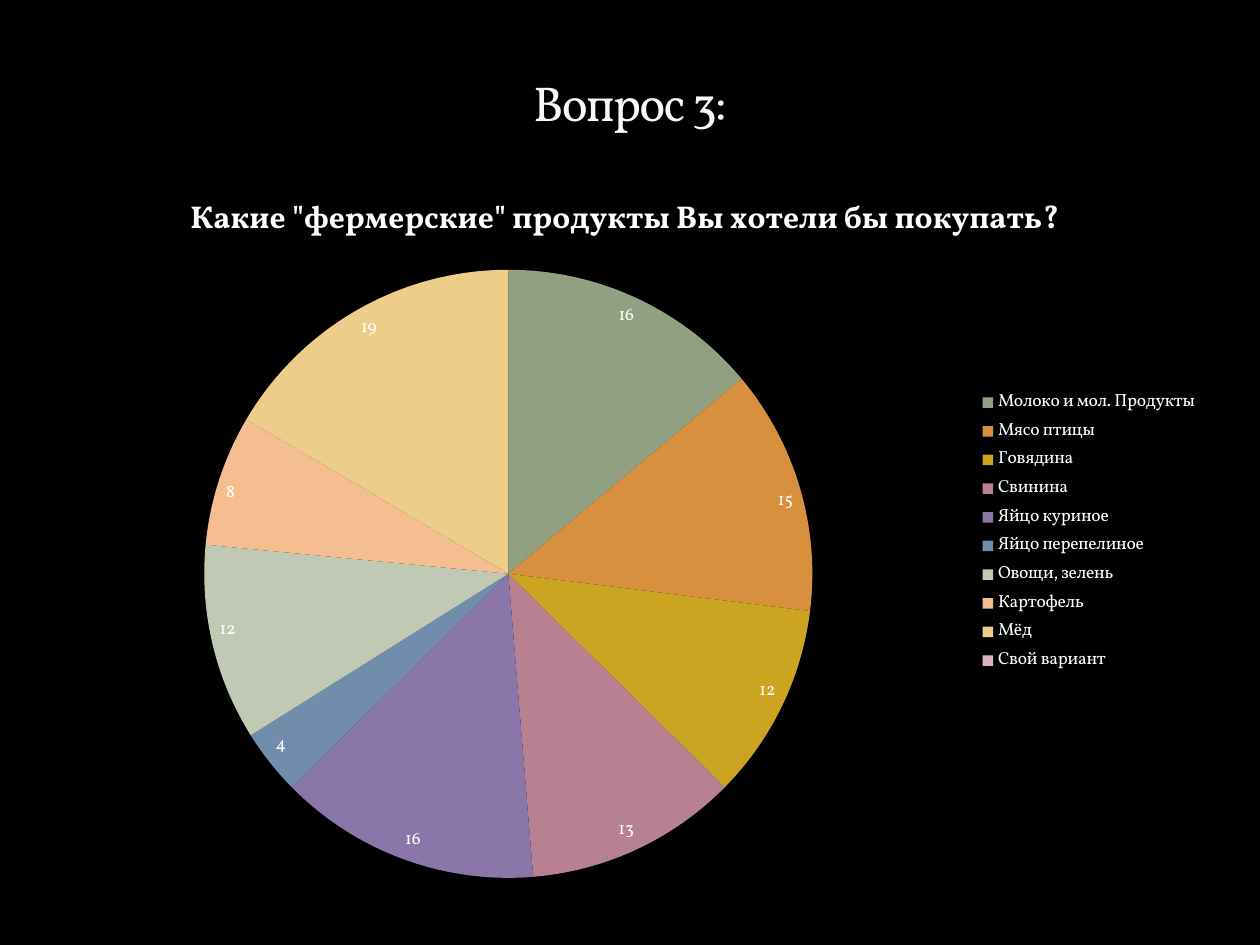
from pptx import Presentation
from pptx.chart.data import CategoryChartData
from pptx.dml.color import RGBColor
from pptx.enum import chart as ch, text as tx
from pptx.oxml import parse_xml
from pptx.oxml.ns import nsdecls
from pptx.util import Inches, Pt

FONT = "Vollkorn"
COLORS = {"background": "000000", "heading": "F9F9F9", "text": "FFFFFF"}
HEADING = "Вопрос 3:"
QUESTION = 'Какие "фермерские" продукты Вы хотели бы покупать?'
ANSWERS = [  # product, votes, slice colour
    ("Молоко и мол. Продукты", 16, "92A082"),
    ("Мясо птицы", 15, "D7913E"),
    ("Говядина", 12, "CBA522"),
    ("Свинина", 13, "B78192"),
    ("Яйцо куриное", 16, "8A76A9"),
    ("Яйцо перепелиное", 4, "728CAB"),
    ("Овощи, зелень", 12, "C0C9B4"),
    ("Картофель", 8, "F5BE91"),
    ("Мёд", 19, "ECCE8A"),
    ("Свой вариант", 0, "DDB3C1"),
]
CHART_BOX = (0.31, 1.33, 9.3, 5.78)
PIE_BOX = (1.62, 2.14, 4.83, 4.83)


def style(font, size, color, bold=False):
    font.name, font.size, font.bold = FONT, Pt(size), bold
    font.color.rgb = RGBColor.from_string(color)


def place_pie(chart):
    """Fix the pie inside the chart, as fractions of the chart's box."""
    left, top, width, height = CHART_BOX
    x, y, w, h = PIE_BOX
    fractions = {"x": (x - left) / width, "y": (y - top) / height,
                 "w": w / width, "h": h / height}
    modes = '<c:xMode val="edge"/><c:yMode val="edge"/>'
    sizes = "".join(f'<c:{k} val="{v:.3f}"/>' for k, v in fractions.items())
    layout = parse_xml(
        f'<c:layout {nsdecls("c")}><c:manualLayout><c:layoutTarget val="inner"/>'
        f"{modes}{sizes}</c:manualLayout></c:layout>")
    plot_area = chart.element.chart.plotArea
    for old in plot_area.xpath("c:layout"):
        plot_area.remove(old)
    plot_area.insert(0, layout)


def add_heading(slide):
    box = slide.shapes.add_textbox(Inches(0.5), Inches(0.3), Inches(9), Inches(0.79))
    frame = box.text_frame
    frame.word_wrap = True
    frame.vertical_anchor = tx.MSO_ANCHOR.BOTTOM
    heading = frame.paragraphs[0]
    heading.text = HEADING
    heading.alignment = tx.PP_ALIGN.CENTER
    style(heading.font, 28, COLORS["heading"])
    heading.runs[0].font._element.set("spc", "-100")


def add_answers_pie(slide):
    products, votes, slice_colors = zip(*ANSWERS)
    data = CategoryChartData()
    data.categories = products
    data.add_series(QUESTION, votes)
    chart = slide.shapes.add_chart(
        ch.XL_CHART_TYPE.PIE, *map(Inches, CHART_BOX), data).chart
    style(chart.font, 10, COLORS["text"])

    chart.has_title = True
    question = chart.chart_title.text_frame.paragraphs[0]
    question.text = QUESTION
    style(question.font, 18, COLORS["text"], bold=True)

    chart.has_legend = True
    chart.legend.position = ch.XL_LEGEND_POSITION.RIGHT
    chart.legend.include_in_layout = False
    style(chart.legend.font, 10, COLORS["text"])

    plot = chart.plots[0]
    plot.vary_by_categories = True
    for i, color in enumerate(slice_colors):
        point = plot.series[0].points[i].format
        point.fill.solid()
        point.fill.fore_color.rgb = RGBColor.from_string(color)
        point.line.fill.background()

    plot.has_data_labels = True
    labels = plot.data_labels
    labels.show_value = True
    labels.number_format = "0;;"  # zero votes get no label
    labels.number_format_is_linked = False
    labels.position = ch.XL_LABEL_POSITION.INSIDE_END
    style(labels.font, 10, COLORS["text"])
    place_pie(chart)


def main():
    deck = Presentation()
    deck.slide_width, deck.slide_height = Inches(10), Inches(7.5)
    slide = deck.slides.add_slide(deck.slide_layouts[6])
    slide.background.fill.solid()
    slide.background.fill.fore_color.rgb = RGBColor.from_string(COLORS["background"])
    add_answers_pie(slide)
    add_heading(slide)
    deck.save("out.pptx")


if __name__ == "__main__":
    main()
